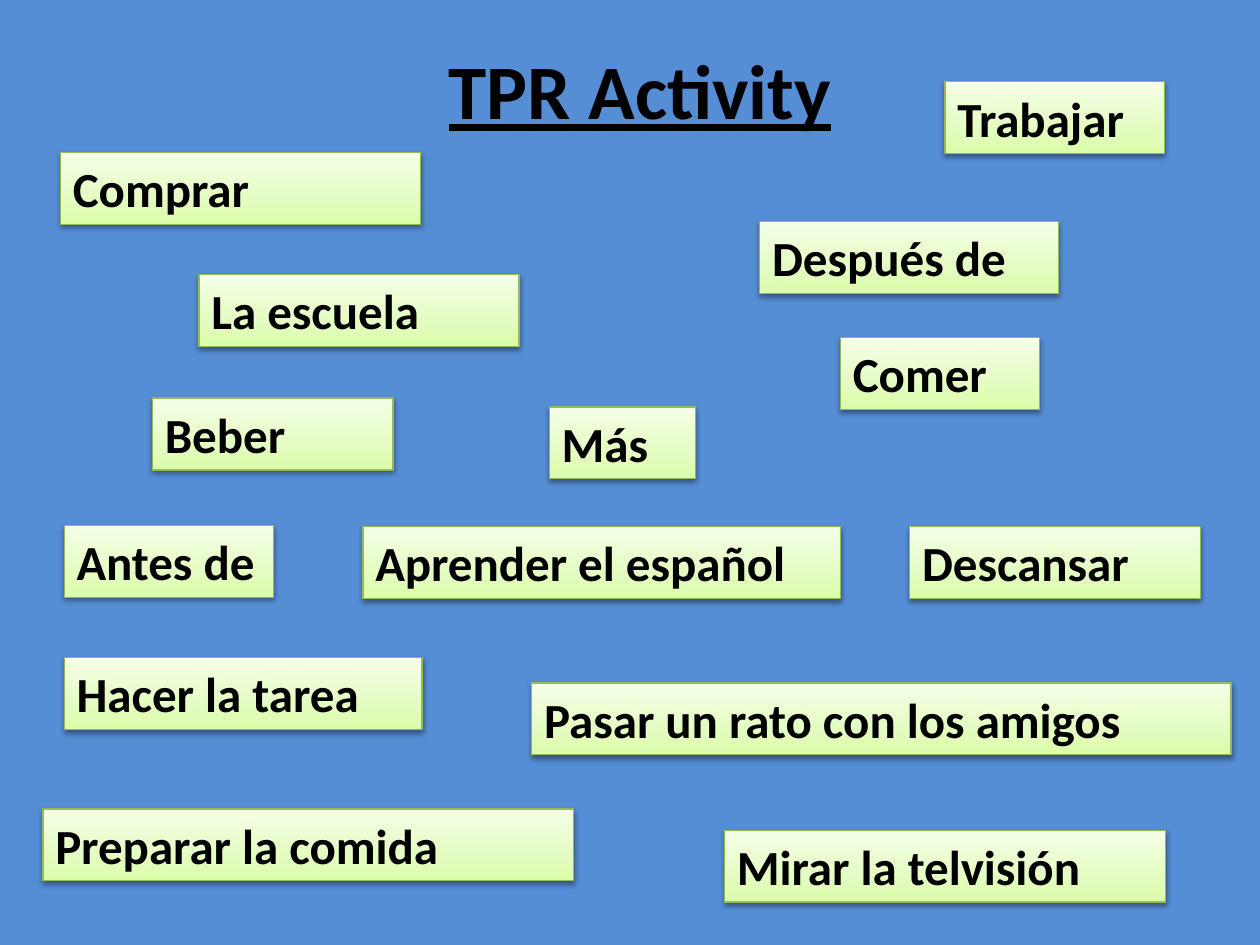
from lxml.etree import SubElement
from pptx import Presentation
from pptx.dml.color import RGBColor
from pptx.enum.shapes import MSO_SHAPE
from pptx.enum.text import MSO_ANCHOR, MSO_AUTO_SIZE, PP_ALIGN
from pptx.oxml import parse_xml
from pptx.oxml.ns import nsdecls, qn
from pptx.util import Inches, Pt

FONT = "Calibri"
BLACK = "000000"
BACKGROUND = "558ED5"
CARD_BORDER = "98B955"
CARD_GRADIENT = [(0, "DAFDA7"), (35, "E4FCC2"), (100, "F5FFE7")]
CARD_HEIGHT = 0.57
CARDS = [
    ("La escuela", 1.58, 2.18, 2.54),
    ("Más", 4.36, 3.23, 1.16),
    ("Después de", 6.03, 1.76, 2.37),
    ("Antes de", 0.51, 4.17, 1.66),
    ("Aprender el español", 2.88, 4.18, 3.79),
    ("Descansar", 7.22, 4.18, 2.31),
    ("Hacer la tarea", 0.51, 5.22, 2.84),
    ("Pasar un rato con los amigos", 4.22, 5.42, 5.55),
    ("Trabajar", 7.5, 0.65, 1.74),
    ("Mirar la telvisión", 5.75, 6.59, 3.5),
    ("Beber", 1.21, 3.16, 1.91),
    ("Comprar", 0.48, 1.21, 2.86),
    ("Comer", 6.67, 2.68, 1.58),
    ("Preparar la comida", 0.34, 6.42, 4.21),
]


def color(value):
    """Turn a hex string into a colour."""
    return RGBColor.from_string(value)


def write(text_frame, text, size, alignment, underline=None):
    """Write one bold black paragraph."""
    text_frame.text = text
    paragraph = text_frame.paragraphs[0]
    paragraph.alignment = alignment
    font = paragraph.font
    font.name, font.size = FONT, Pt(size)
    font.bold, font.underline = True, underline
    font.color.rgb = color(BLACK)


def add_gradient(shape, stops):
    """Fill a shape with a gradient that runs from bottom to top."""
    gradient = parse_xml(f'<a:gradFill {nsdecls("a")} rotWithShape="1"/>')
    stop_list = SubElement(gradient, qn("a:gsLst"))
    for position, value in stops:
        stop = SubElement(stop_list, qn("a:gs"), pos=str(position * 1000))
        SubElement(stop, qn("a:srgbClr"), val=value)
    SubElement(gradient, qn("a:lin"), ang="16200000", scaled="0")
    shape._element.spPr.find(qn("a:prstGeom")).addnext(gradient)


def add_shadow(shape):
    """Give a shape a soft shadow below it."""
    shape.shadow.inherit = False
    effects = shape._element.spPr.find(qn("a:effectLst"))
    shadow = SubElement(effects, qn("a:outerShdw"), blurRad=str(Pt(3.1)),
                        dist=str(Pt(1.6)), dir="5400000", rotWithShape="0")
    shade = SubElement(shadow, qn("a:srgbClr"), val=BLACK)
    SubElement(shade, qn("a:alpha"), val="38000")


def add_title(slide, text, left, top, width, height):
    """Place the underlined title in its placeholder."""
    title = slide.shapes.title
    title.left, title.top = Inches(left), Inches(top)
    title.width, title.height = Inches(width), Inches(height)
    title.text_frame.vertical_anchor = MSO_ANCHOR.MIDDLE
    write(title.text_frame, text, 44, PP_ALIGN.CENTER, underline=True)


def add_card(slide, text, left, top, width):
    """Place one green word card."""
    card = slide.shapes.add_shape(MSO_SHAPE.RECTANGLE, Inches(left), Inches(top),
                                  Inches(width), Inches(CARD_HEIGHT))
    add_gradient(card, CARD_GRADIENT)
    card.line.color.rgb = color(CARD_BORDER)
    card.line.width = Pt(0.75)
    add_shadow(card)
    text_frame = card.text_frame
    text_frame.word_wrap = True
    text_frame.auto_size = MSO_AUTO_SIZE.SHAPE_TO_FIT_TEXT
    text_frame.vertical_anchor = MSO_ANCHOR.TOP
    write(text_frame, text, 28, PP_ALIGN.LEFT)


def main():
    """Build the vocabulary slide."""
    presentation = Presentation()
    presentation.slide_width, presentation.slide_height = Inches(10), Inches(7.5)
    slide = presentation.slides.add_slide(presentation.slide_layouts[5])
    slide.background.fill.solid()
    slide.background.fill.fore_color.rgb = color(BACKGROUND)
    add_title(slide, "TPR Activity", 0.58, 0.08, 9, 1.25)
    for card in CARDS:
        add_card(slide, *card)
    presentation.save("out.pptx")


if __name__ == "__main__":
    main()
